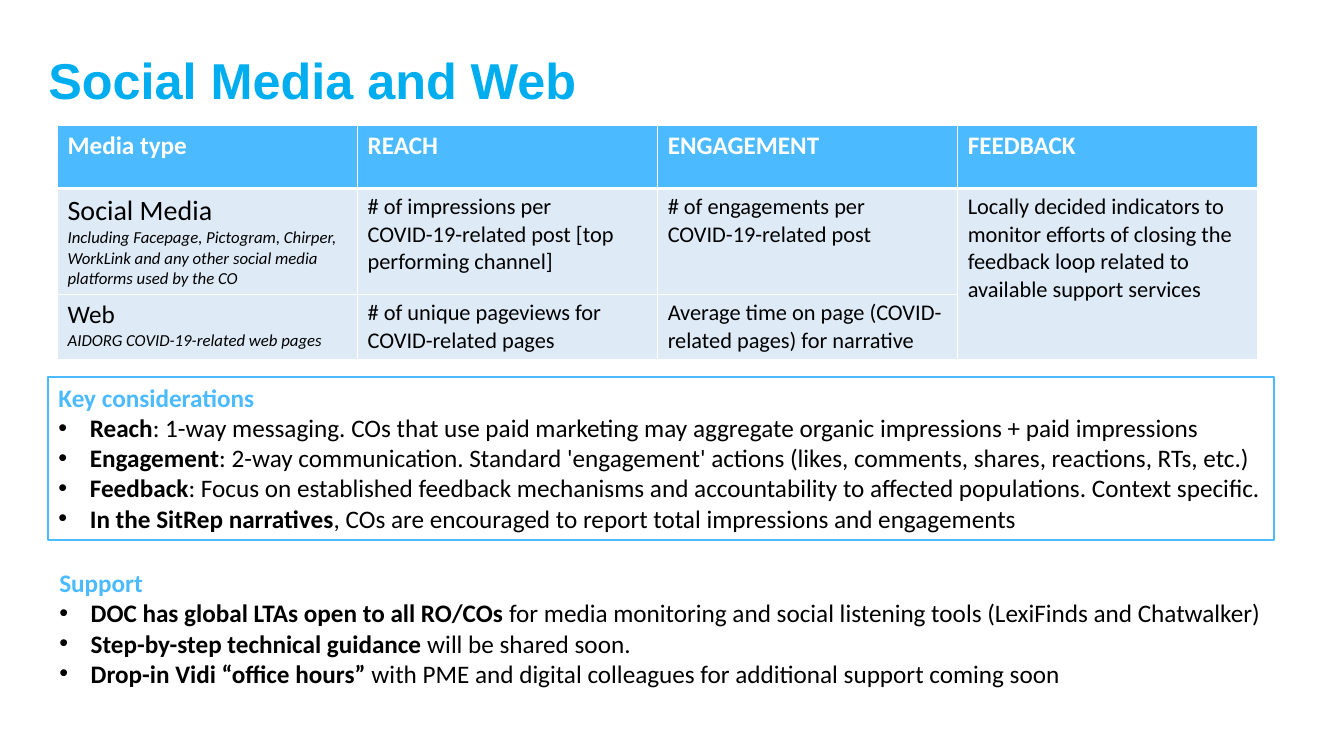
from dataclasses import dataclass

from lxml.etree import SubElement
from pptx import Presentation
from pptx.dml.color import RGBColor
from pptx.enum.text import MSO_ANCHOR, MSO_AUTO_SIZE, PP_ALIGN
from pptx.oxml.ns import qn
from pptx.util import Cm, Pt


@dataclass(frozen=True)
class Theme:
    title: str = "00AEEF"
    accent: str = "4BBAFF"
    band: str = "DEEBF7"
    white: str = "FFFFFF"
    black: str = "000000"
    title_font: str = "Arial"
    body_font: str = "Calibri"
    title_size: int = 36
    large: int = 20
    body: int = 18
    cell: int = 16
    small: int = 12


T = Theme()


@dataclass(frozen=True)
class Run:
    text: str
    size: int = T.body
    color: str = T.black
    bold: bool = False
    italic: bool = False
    font: str = T.body_font


@dataclass(frozen=True)
class Box:
    left: float
    top: float
    width: float
    height: float


@dataclass(frozen=True)
class ListBox:
    box: Box
    heading: str
    items: list[tuple[str, str]]  # bold lead, remaining text
    outlined: bool = False


TITLE_BOX = Box(1.22, 1.35, 28.55, 1.5)
TABLE_BOX = Box(1.45, 3.15, 30.25, 5.87)
ROW_HEIGHTS = [1.6, 2.67, 1.6]
INDENT = Cm(0.79)

HEADERS = ["Media type", "REACH", "ENGAGEMENT", "FEEDBACK"]
MEDIA_ROWS = [
    [[Run("Social Media", T.large),
      Run("Including Facepage, Pictogram, Chirper, WorkLink and any other social "
          "media platforms used by the CO", T.small, italic=True)],
     [Run("# of impressions per COVID-19-related post [top performing channel]", T.cell)],
     [Run("# of engagements per COVID-19-related post", T.cell)],
     [Run("Locally decided indicators to monitor efforts of closing the feedback loop "
          "related to available support services", T.cell)]],
    [[Run("Web"),
      Run("AIDORG COVID-19-related web pages", T.small, italic=True)],
     [Run("# of unique pageviews for COVID-related pages", T.cell)],
     [Run("Average time on page (COVID-related pages) for narrative", T.cell)],
     []],
]

LISTS = [
    ListBox(Box(1.22, 9.5, 30.89, 4.11), "Key considerations", [
        ("Reach", ": 1-way messaging. COs that use paid marketing may aggregate "
                  "organic impressions + paid impressions"),
        ("Engagement", ": 2-way communication. Standard 'engagement' actions "
                       "(likes, comments, shares, reactions, RTs, etc.)"),
        ("Feedback", ": Focus on established feedback mechanisms and accountability "
                     "to affected populations. Context specific."),
        ("In the SitRep narratives", ", COs are encouraged to report total "
                                     "impressions and engagements"),
    ], outlined=True),
    ListBox(Box(1.24, 14.17, 31.09, 4.11), "Support", [
        ("DOC has global LTAs open to all RO/COs",
         " for media monitoring and social listening tools (LexiFinds and Chatwalker)"),
        ("Step-by-step technical guidance", " will be shared soon."),
        ("Drop-in Vidi “office hours”",
         " with PME and digital colleagues for additional support coming soon"),
    ]),
]


def rgb(color: str) -> RGBColor:
    return RGBColor.from_string(color)


def add_run(p, run: Run) -> None:
    r = p.add_run()
    r.text = run.text
    f = r.font
    f.name, f.size, f.bold, f.italic = run.font, Pt(run.size), run.bold, run.italic
    f.color.rgb = rgb(run.color)


def next_paragraph(tf, first: bool):
    p = tf.paragraphs[0] if first else tf.add_paragraph()
    p.alignment = PP_ALIGN.LEFT
    p.space_before = p.space_after = Pt(0)
    return p


def place(sp, box: Box, anchor: MSO_ANCHOR):
    sp.left, sp.top = Cm(box.left), Cm(box.top)
    sp.width, sp.height = Cm(box.width), Cm(box.height)
    tf = sp.text_frame
    tf.word_wrap, tf.auto_size, tf.vertical_anchor = True, MSO_AUTO_SIZE.NONE, anchor
    return tf


def set_bullet(p, char: str = "") -> None:
    pPr = p._p.get_or_add_pPr()
    indent = INDENT if char else 0
    pPr.set("marL", str(indent))
    pPr.set("indent", str(-indent))
    if char:
        SubElement(pPr, qn("a:buFont"), typeface="Arial")
        SubElement(pPr, qn("a:buChar"), char=char)
    else:
        SubElement(pPr, qn("a:buNone"))


def fill_title(sp, text: str) -> None:
    tf = place(sp, TITLE_BOX, MSO_ANCHOR.MIDDLE)
    tf.margin_left = tf.margin_right = tf.margin_top = tf.margin_bottom = 0
    p = next_paragraph(tf, True)
    p.line_spacing = 0.9
    add_run(p, Run(text, T.title_size, T.title, True, font=T.title_font))


def fill_list(sp, content: ListBox) -> None:
    tf = place(sp, content.box, MSO_ANCHOR.TOP)
    if content.outlined:
        sp.line.color.rgb = rgb(T.accent)
        sp.line.width = Pt(1.5)
    p = next_paragraph(tf, True)
    set_bullet(p)
    add_run(p, Run(content.heading, color=T.accent, bold=True))
    for lead, rest in content.items:
        p = next_paragraph(tf, False)
        set_bullet(p, "•")
        add_run(p, Run(lead, bold=True))
        add_run(p, Run(rest))


def style_cell(cell, fill: str, bottom: float) -> None:
    tcPr = cell._tc.get_or_add_tcPr()
    for side, width in (("L", 1), ("R", 1), ("T", 1), ("B", bottom)):
        ln = SubElement(tcPr, qn(f"a:ln{side}"), w=str(Pt(width)))
        SubElement(SubElement(ln, qn("a:solidFill")), qn("a:srgbClr"), val=T.white)
    cell.fill.solid()
    cell.fill.fore_color.rgb = rgb(fill)


def add_media_table(s) -> None:
    header = [[Run(h, color=T.white, bold=True)] for h in HEADERS]
    rows = [header, *MEDIA_ROWS]
    b = TABLE_BOX
    table = s.shapes.add_table(len(rows), len(HEADERS), Cm(b.left), Cm(b.top),
                               Cm(b.width), Cm(b.height)).table
    for col in table.columns:
        col.width = Cm(b.width / len(HEADERS))
    for i, row in enumerate(rows):
        table.rows[i].height = Cm(ROW_HEIGHTS[i])
        for j, runs in enumerate(row):
            cell = table.cell(i, j)
            style_cell(cell, T.band if i else T.accent, 1 if i else 3)
            for k, run in enumerate(runs):
                add_run(next_paragraph(cell.text_frame, k == 0), run)
    table.cell(1, 3).merge(table.cell(2, 3))


def main() -> None:
    prs = Presentation()
    prs.slide_width, prs.slide_height = Cm(33.87), Cm(19.05)
    s = prs.slides.add_slide(prs.slide_layouts[3])  # title and two bodies

    # Title
    fill_title(s.shapes.title, "Social Media and Web")
    # Indicators by media type
    add_media_table(s)
    # Lists below the table
    for idx, content in enumerate(LISTS, start=1):
        fill_list(s.placeholders[idx], content)

    prs.save("out.pptx")


if __name__ == "__main__":
    main()
